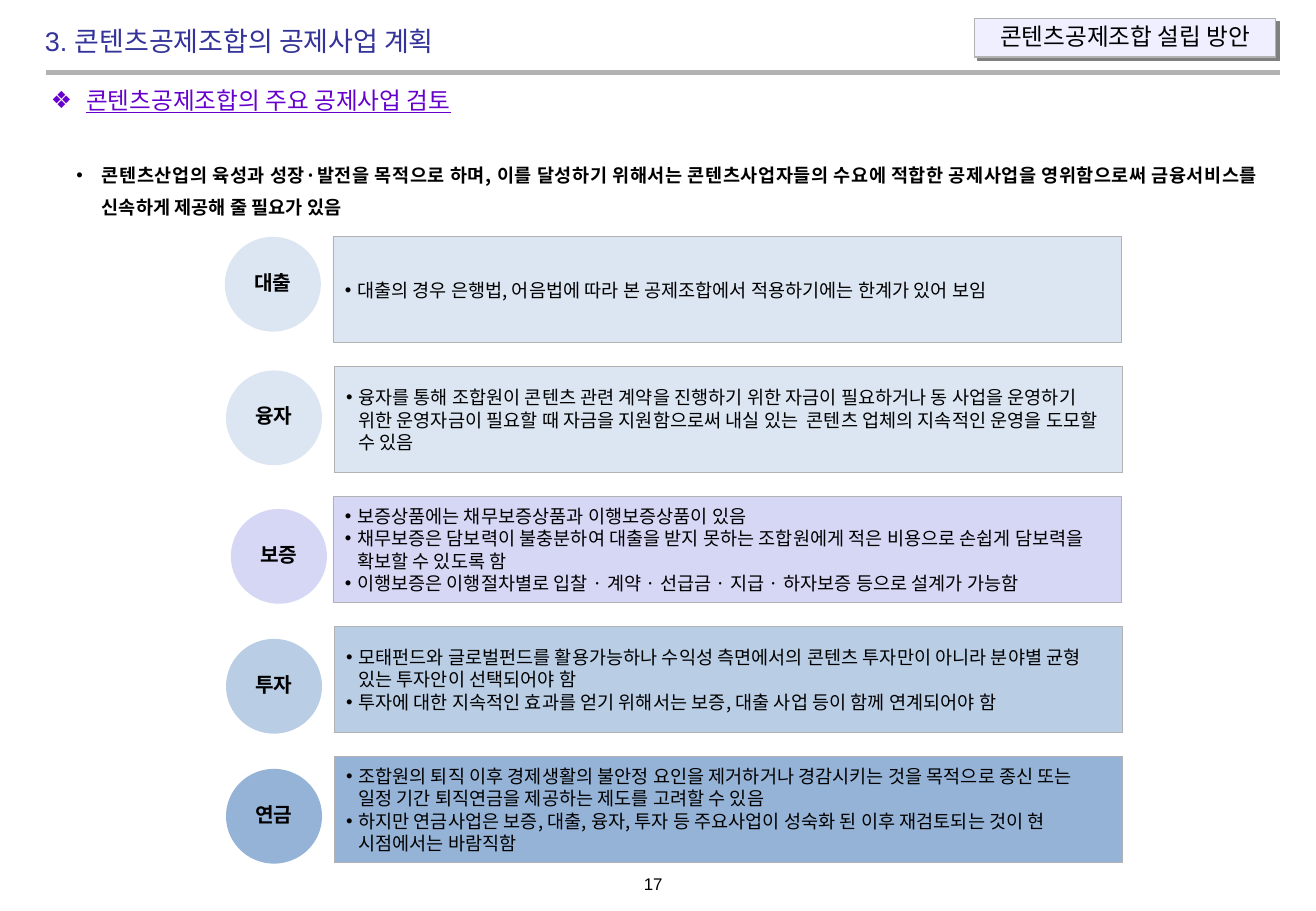
from lxml import etree
from pptx import Presentation
from pptx.dml.color import RGBColor
from pptx.enum.shapes import MSO_CONNECTOR, MSO_SHAPE
from pptx.enum.text import MSO_ANCHOR, PP_ALIGN
from pptx.oxml.ns import qn
from pptx.util import Inches, Pt

BLACK = RGBColor(0x00, 0x00, 0x00)
NAVY = RGBColor(0x33, 0x33, 0x99)
PURPLE = RGBColor(0x66, 0x00, 0xCC)
GRAY = RGBColor(0xB2, 0xB2, 0xB2)
LAVENDER = RGBColor(0xEF, 0xEF, 0xFF)
PALE_BLUE = RGBColor(0xDC, 0xE6, 0xF2)
LILAC = RGBColor(0xD6, 0xD6, 0xF5)
LIGHT_BLUE = RGBColor(0xB9, 0xCD, 0xE5)
MID_BLUE = RGBColor(0x95, 0xB3, 0xD7)
LATIN_FONT = "Arial"
KOREAN_FONT = "Noto Sans CJK KR"


def write(shape, text, size, font=KOREAN_FONT, color=BLACK, bold=False,
          align=PP_ALIGN.LEFT, spacing=1.0, anchor=MSO_ANCHOR.MIDDLE):
    """Fill the shape with one paragraph per line of text."""
    frame = shape.text_frame
    frame.text = text
    frame.word_wrap = True
    frame.vertical_anchor = anchor
    for paragraph in frame.paragraphs:
        paragraph.alignment = align
        paragraph.line_spacing = spacing
        for run in paragraph.runs:
            run.font.name = font
            run.font.size = Pt(size)
            run.font.bold = bold
            run.font.color.rgb = color


def add_bullets(shape, mark, indent, font=LATIN_FONT):
    for paragraph in shape.text_frame.paragraphs:
        properties = paragraph._p.get_or_add_pPr()
        properties.set("marL", str(Inches(indent)))
        properties.set("indent", str(-Inches(indent)))
        etree.SubElement(properties, qn("a:buFont"), typeface=font)
        etree.SubElement(properties, qn("a:buChar"), char=mark)


prs = Presentation()
prs.slide_width = Inches(10.83)
prs.slide_height = Inches(7.5)
slide = prs.slides.add_slide(prs.slide_layouts[5])
shapes = slide.shapes

# Header
rule = shapes.add_connector(MSO_CONNECTOR.STRAIGHT, Inches(0.38), Inches(0.6),
                            Inches(10.53), Inches(0.6))
rule.line.color.rgb = GRAY
rule.line.width = Pt(3)
etree.SubElement(rule._element.spPr, qn("a:effectLst"))

title = shapes.title
title.left, title.top = Inches(0.27), Inches(0.15)
title.width, title.height = Inches(3.72), Inches(0.37)
write(title, "3. 콘텐츠공제조합의 공제사업 계획", 16, LATIN_FONT, NAVY)

badge = shapes.add_shape(MSO_SHAPE.RECTANGLE, Inches(8.02), Inches(0.15),
                         Inches(2.48), Inches(0.32))
badge.fill.solid()
badge.fill.fore_color.rgb = LAVENDER
badge.line.color.rgb = GRAY
badge.line.width = Pt(0.75)
effects = etree.SubElement(badge._element.spPr, qn("a:effectLst"))
shadow = etree.SubElement(effects, qn("a:outerShdw"), dist=str(Pt(2.8)),
                          dir="2700000", algn="ctr", rotWithShape="0")
etree.SubElement(shadow, qn("a:srgbClr"), val="808080")
write(badge, "콘텐츠공제조합 설립 방안", 14, LATIN_FONT, align=PP_ALIGN.CENTER, spacing=0.9)

# Section heading and introduction
heading = shapes.add_textbox(Inches(0.32), Inches(0.68), Inches(3.8), Inches(0.31))
write(heading, "콘텐츠공제조합의 주요 공제사업 검토", 14, LATIN_FONT, PURPLE, spacing=0.9)
heading.text_frame.paragraphs[0].runs[0].font.underline = True
add_bullets(heading, "❖", 0.29)

intro = shapes.add_textbox(Inches(0.53), Inches(1.23), Inches(9.92), Inches(0.62))
write(intro, "콘텐츠산업의 육성과 성장·발전을 목적으로 하며, 이를 달성하기 위해서는 "
      "콘텐츠사업자들의 수요에 적합한 공제사업을 영위함으로써 금융서비스를 "
      "신속하게 제공해 줄 필요가 있음",
      11, bold=True, align=PP_ALIGN.JUSTIFY, spacing=1.4, anchor=MSO_ANCHOR.TOP)
add_bullets(intro, "•", 0.21)

# Business types: name, colour, circle left and top, box left, points
businesses = [
    ("대출", PALE_BLUE, 1.85, 1.95, 2.74, [
        "대출의 경우 은행법, 어음법에 따라 본 공제조합에서 적용하기에는 한계가 있어 보임"]),
    ("융자", PALE_BLUE, 1.86, 3.05, 2.75, [
        "융자를 통해 조합원이 콘텐츠 관련 계약을 진행하기 위한 자금이 필요하거나 동 사업을 "
        "운영하기 위한 운영자금이 필요할 때 자금을 지원함으로써 내실 있는  콘텐츠 업체의 "
        "지속적인 운영을 도모할 수 있음"]),
    ("보증", LILAC, 1.9, 4.19, 2.74, [
        "보증상품에는 채무보증상품과 이행보증상품이 있음",
        "채무보증은 담보력이 불충분하여 대출을 받지 못하는 조합원에게 적은 비용으로 "
        "손쉽게 담보력을 확보할 수 있도록 함",
        "이행보증은 이행절차별로 입찰 · 계약 · 선급금 · 지급 · 하자보증 등으로 설계가 가능함"]),
    ("투자", LIGHT_BLUE, 1.86, 5.26, 2.75, [
        "모태펀드와 글로벌펀드를 활용가능하나 수익성 측면에서의 콘텐츠 투자만이 아니라 "
        "분야별 균형 있는 투자안이 선택되어야 함",
        "투자에 대한 지속적인 효과를 얻기 위해서는 보증, 대출 사업 등이 함께 연계되어야 함"]),
    ("연금", MID_BLUE, 1.86, 6.33, 2.75, [
        "조합원의 퇴직 이후 경제생활의 불안정 요인을 제거하거나 경감시키는 것을 목적으로 "
        "종신 또는 일정 기간 퇴직연금을 제공하는 제도를 고려할 수 있음",
        "하지만 연금사업은 보증, 대출, 융자, 투자 등 주요사업이 성숙화 된 이후 "
        "재검토되는 것이 현 시점에서는 바람직함"]),
]
for row, (name, color, circle_left, circle_top, box_left, points) in enumerate(businesses):
    circle = shapes.add_shape(MSO_SHAPE.OVAL, Inches(circle_left), Inches(circle_top),
                              Inches(0.79), Inches(0.78))
    circle.line.fill.background()
    write(circle, name, 12, bold=True, align=PP_ALIGN.CENTER, spacing=0.85)

    box = shapes.add_shape(MSO_SHAPE.RECTANGLE, Inches(box_left), Inches(1.95 + 1.07 * row),
                           Inches(6.49), Inches(0.87))
    box.line.color.rgb = GRAY
    box.line.width = Pt(0.5)
    write(box, "\n".join(points), 11)
    add_bullets(box, "•", 0.1)

    for shape in (circle, box):
        shape.shadow.inherit = False
        shape.fill.solid()
        shape.fill.fore_color.rgb = color

page_number = shapes.add_textbox(Inches(4.94), Inches(7.15), Inches(0.87), Inches(0.26))
write(page_number, "17", 10, LATIN_FONT, align=PP_ALIGN.CENTER)

prs.save("out.pptx")
